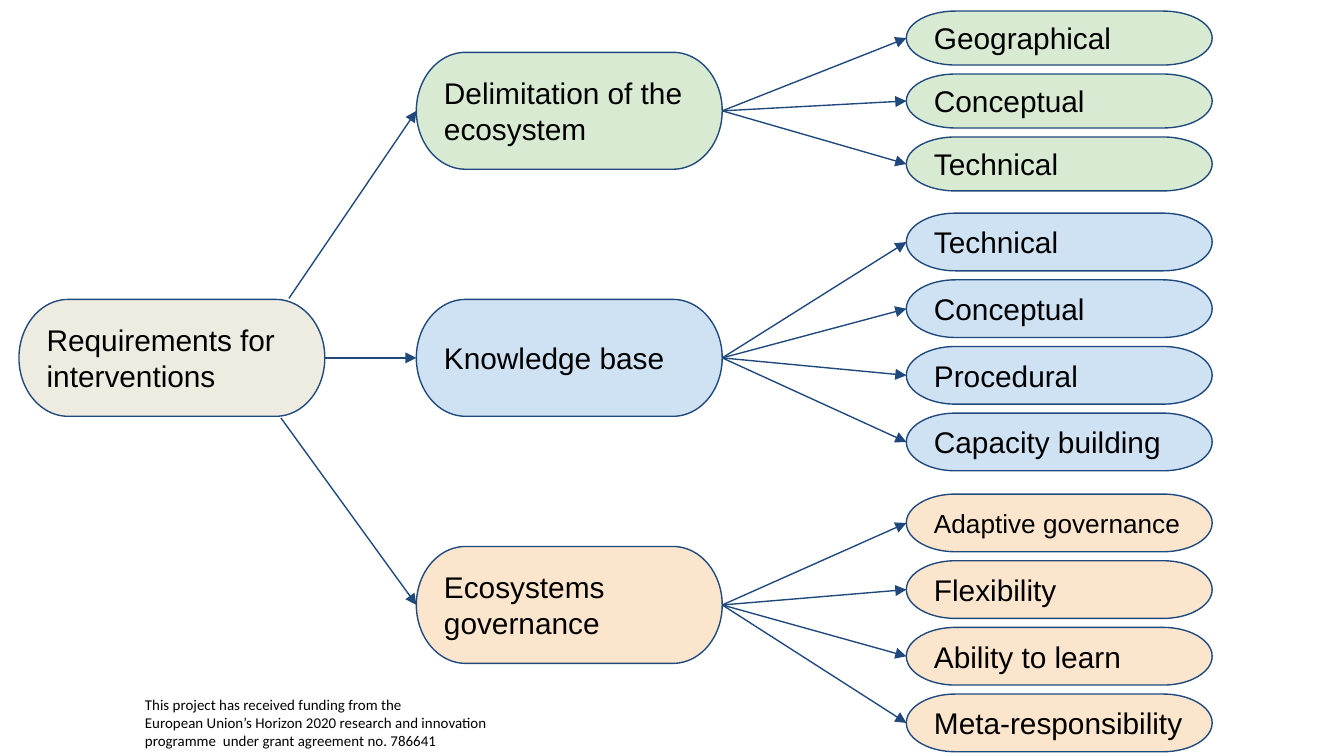
from pptx import Presentation
from pptx.dml.color import RGBColor
from pptx.enum.shapes import MSO_CONNECTOR, MSO_SHAPE
from pptx.enum.text import MSO_ANCHOR, PP_ALIGN
from pptx.oxml.ns import qn
from pptx.util import Cm, Pt
from lxml import etree

TERMINATOR = MSO_SHAPE.FLOWCHART_TERMINATOR
STRAIGHT = MSO_CONNECTOR.STRAIGHT
MIDDLE = MSO_ANCHOR.MIDDLE
LEFT = PP_ALIGN.LEFT
LEFT_SIDE, RIGHT_SIDE = 1, 3


class Theme:
    root = "EEECE1"
    green = "D9EAD3"
    blue = "CFE2F3"
    orange = "FCE5CD"
    line = RGBColor.from_string("1F497D")
    text = RGBColor.from_string("000000")
    line_width = Pt(0.75)
    font, note_font = "Arial", "Calibri"
    size, small, note = Pt(16), Pt(14), Pt(8)


NODE_W, NODE_H = 5.78, 2.21
ROOT_X, BRANCH_X, LEAF_X = 0.36, 7.87, 17.13
BRANCH_Y, BRANCH_STEP = 0.99, 4.67

# label, fill, first leaf top, leaf step, leaf height, leaves
BRANCHES = [
    ("Delimitation of the ecosystem", Theme.green, 0.21, 1.19, 1.02,
     ["Geographical", "Conceptual", "Technical"]),
    ("Knowledge base", Theme.blue, 4.03, 1.26, 1.09,
     ["Technical", "Conceptual", "Procedural", "Capacity building"]),
    ("Ecosystems governance", Theme.orange, 9.34, 1.26, 1.09,
     ["Adaptive governance", "Flexibility", "Ability to learn", "Meta-responsibility"]),
]
# where the slanted arrows leave the root, by branch index
ROOT_STARTS = {0: (5.46, 5.64), 2: (5.31, 7.9)}

prs = Presentation()
prs.slide_width, prs.slide_height = Cm(25.4), Cm(14.29)
s = prs.slides.add_slide(prs.slide_layouts[6])


def add_node(label, x, y, h, fill, size=Theme.size):
    sp = s.shapes.add_shape(TERMINATOR, Cm(x), Cm(y), Cm(NODE_W), Cm(h))
    sp.shadow.inherit = False
    sp.fill.solid()
    sp.fill.fore_color.rgb = RGBColor.from_string(fill)
    sp.line.color.rgb = Theme.line
    sp.line.width = Theme.line_width
    tf = sp.text_frame
    tf.word_wrap = True
    tf.vertical_anchor = MIDDLE
    tf.margin_left = tf.margin_right = tf.margin_top = tf.margin_bottom = Cm(0.25)
    p = tf.paragraphs[0]
    p.alignment = LEFT
    r = p.add_run()
    r.text = label
    r.font.name, r.font.size = Theme.font, size
    r.font.color.rgb = Theme.text
    return sp


def add_arrow(source, target, start=None):
    """Join two nodes; start is a free point used instead of the source's side."""
    x, y = start or (0, 0)
    c = s.shapes.add_connector(STRAIGHT, Cm(x), Cm(y), target.left,
                               target.top + target.height // 2)
    if start is None:
        c.begin_connect(source, RIGHT_SIDE)
    c.end_connect(target, LEFT_SIDE)
    c.line.color.rgb = Theme.line
    c.line.width = Theme.line_width
    etree.SubElement(c.line._get_or_add_ln(), qn("a:tailEnd"), type="triangle")
    etree.SubElement(c._element.spPr, qn("a:effectLst"))


# Funding note
tb = s.shapes.add_textbox(Cm(2.49), Cm(13.03), Cm(7.39), Cm(0.86))
tf = tb.text_frame
tf.word_wrap = True
for i, line in enumerate([
    "This project has received funding from the",
    "European Union’s Horizon 2020 research and innovation programme  "
    "under grant agreement no. 786641",
]):
    p = tf.add_paragraph() if i else tf.paragraphs[0]
    r = p.add_run()
    r.text = line
    r.font.name, r.font.size = Theme.note_font, Theme.note
    r.font.color.rgb = Theme.text

# Tree: root, branches and leaves
root = add_node("Requirements for interventions", ROOT_X, BRANCH_Y + BRANCH_STEP,
                NODE_H, Theme.root)
for i, (label, fill, top, step, height, leaves) in enumerate(BRANCHES):
    branch = add_node(label, BRANCH_X, BRANCH_Y + i * BRANCH_STEP, NODE_H, fill)
    add_arrow(root, branch, ROOT_STARTS.get(i))
    for j, name in enumerate(leaves):
        size = Theme.small if name == "Adaptive governance" else Theme.size
        leaf = add_node(name, LEAF_X, top + j * step, height, fill, size)
        add_arrow(branch, leaf)

prs.save("out.pptx")
